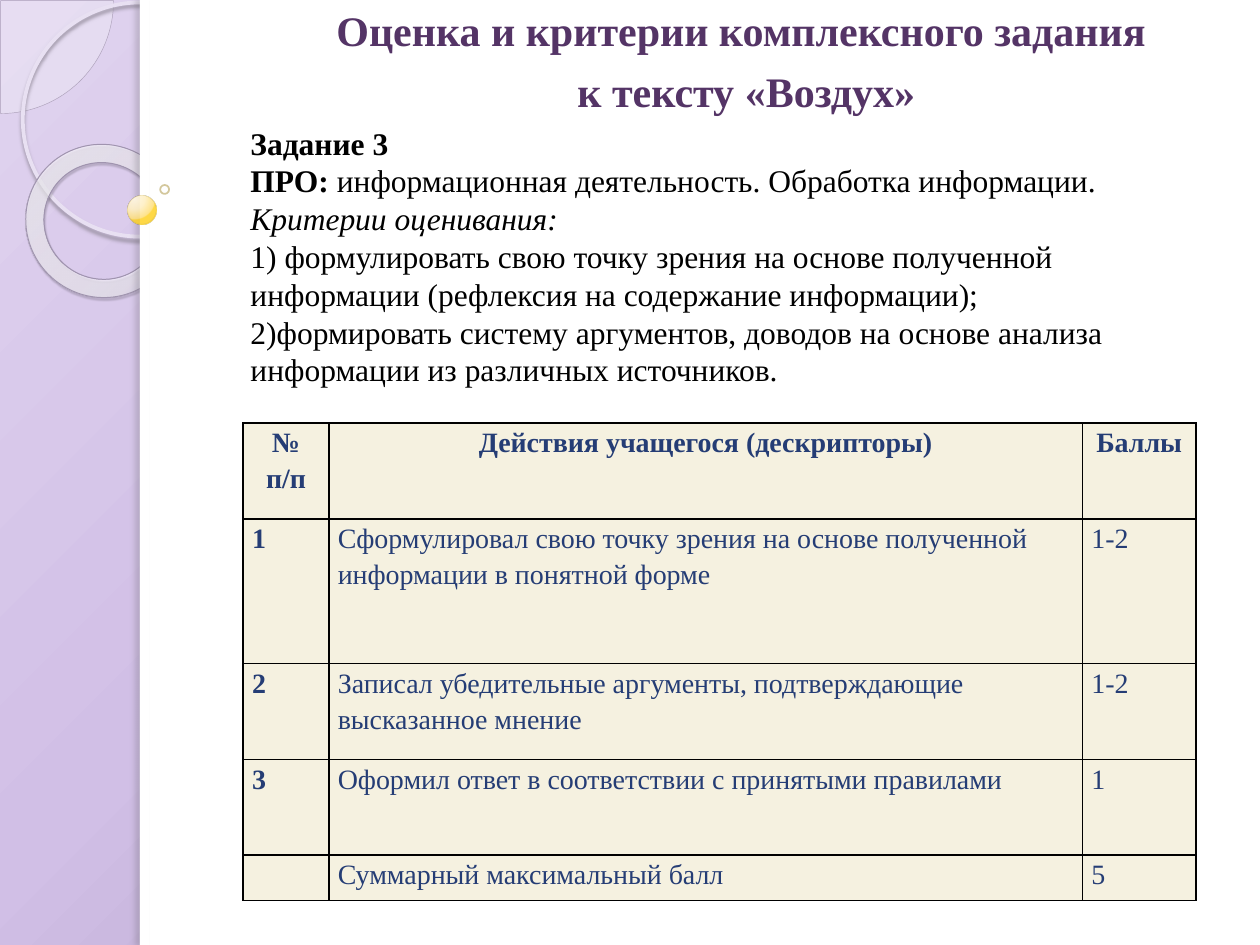
"""Build the slide with the grading criteria for the text «Воздух»."""
from lxml import etree
from pptx import Presentation
from pptx import util as u
from pptx.dml.color import RGBColor
from pptx.enum import shapes, text
from pptx.oxml.ns import qn

FONT = "Times New Roman"
PLUM = RGBColor(0x54, 0x34, 0x66)
NAVY = RGBColor(0x25, 0x3D, 0x75)
BLACK = RGBColor(0, 0, 0)
WHITE = RGBColor(0xFF, 0xFF, 0xFF)
CREAM = RGBColor(0xF5, 0xF1, 0xE0)
MIST = RGBColor(0xF6, 0xF4, 0xF9)
PIE_EDGE = RGBColor(0xAC, 0xA0, 0xB9)
RING = RGBColor(0xE8, 0xE0, 0xF2)
RING_SHADE = RGBColor(0x95, 0x8D, 0x9D)
DONUT_EDGE = RGBColor(0xA0, 0x94, 0xAF)
DONUT_SHADE = RGBColor(0x4A, 0x45, 0x50)
PANEL_SHADE = RGBColor(0x64, 0x60, 0x68)
BALL_EDGE = RGBColor(0xCA, 0xB4, 0x5C)
DOT_EDGE = RGBColor(0xB6, 0xA3, 0x5A)
LILAC = [(0, RGBColor(0xE0, 0xD3, 0xEF), 100), (40, RGBColor(0xD1, 0xBF, 0xE6), 100),
         (100, RGBColor(0x9A, 0x8A, 0xAD), 100)]
PEARL = [(0, RGBColor(0xF9, 0xF7, 0xFB), 70), (70, RGBColor(0xFC, 0xFB, 0xFE), 55),
         (100, RGBColor(0xB0, 0x99, 0xCA), 60)]
GOLD = [(0, RGBColor(0xFF, 0xF7, 0xE2), 95), (50, RGBColor(0xFF, 0xF0, 0xC5), 90),
        (95, RGBColor(0xFF, 0xE0, 0x7C), 88), (100, RGBColor(0xFF, 0xD3, 0x27), 85)]

LEFT, CENTER = text.PP_ALIGN.LEFT, text.PP_ALIGN.CENTER
JUSTIFY = text.PP_ALIGN.JUSTIFY
TITLE = ["Оценка и критерии комплексного задания", " к тексту «Воздух»"]
CRITERIA = [
    [("Задание 3", True, False)],
    [("ПРО: ", True, False),
     ("информационная деятельность. Обработка информации.", False, False)],
    [("Критерии оценивания:", False, True)],
    [("1) формулировать свою точку зрения на основе полученной информации "
      "(рефлексия на содержание информации);", False, False)],
    [("2)формировать систему аргументов, доводов на основе анализа информации "
      "из различных источников.", False, False)],
]
SCORES = [
    ("№ п/п", "Действия учащегося (дескрипторы)", "Баллы"),
    ("1", "Сформулировал свою точку зрения на основе полученной информации "
          "в понятной форме", "1-2"),
    ("2", "Записал убедительные аргументы, подтверждающие высказанное мнение", "1-2"),
    ("3", "Оформил ответ в соответствии с принятыми правилами", "1"),
    ("", "Суммарный максимальный балл", "5"),
]
COLUMN_WIDTHS = [1.73, 15.19, 2.29]
ROW_HEIGHTS = [1.93, 2.92, 1.93, 1.93, 0.91]


def add_node(parent, tag, **attributes):
    """Append a DrawingML element."""
    return etree.SubElement(parent, qn(tag), {k: str(v) for k, v in attributes.items()})


def add_color(parent, color, opacity=100):
    """Append a colour with its opacity in percent."""
    node = add_node(parent, "a:srgbClr", val=color)
    if opacity < 100:
        add_node(node, "a:alpha", val=opacity * 1000)


def set_radial(fill, owner, stops, focus):
    """Give the owner's fill a circular gradient."""
    fill.gradient()
    gradient = owner.find(".//" + qn("a:gradFill"))
    gradient.clear()
    stop_list = add_node(gradient, "a:gsLst")
    for position, color, opacity in stops:
        add_color(add_node(stop_list, "a:gs", pos=position * 1000), color, opacity)
    circle = add_node(gradient, "a:path", path="circle")
    sides = {side: share * 1000 for side, share in zip("ltrb", focus)}
    add_node(circle, "a:fillToRect", **sides)


def add_figure(slide, kind, box, fill=None, opacity=100, stops=None, focus=None,
               edge=None, width=1, edge_opacity=100, shade=None):
    """Add a preset shape with its fill, outline and optional shadow."""
    figure = slide.shapes.add_shape(kind, *map(u.Cm, box))
    if stops:
        set_radial(figure.fill, figure._element, stops, focus)
    elif fill is not None:
        figure.fill.solid()
        figure.fill.fore_color.rgb = fill
        if opacity < 100:
            color = figure._element.spPr.find(qn("a:solidFill"))[0]
            add_node(color, "a:alpha", val=opacity * 1000)
    else:
        figure.fill.background()
    if edge is None:
        figure.line.fill.background()
    else:
        figure.line.color.rgb = edge
        figure.line.width = u.Pt(width)
        if edge_opacity < 100:
            color = figure._element.spPr.find(".//" + qn("a:ln")).find(".//" + qn("a:srgbClr"))
            add_node(color, "a:alpha", val=edge_opacity * 1000)
    figure.shadow.inherit = False
    if shade:
        color, strength, blur, distance, angle = shade
        effects = figure._element.spPr.find(qn("a:effectLst"))
        shadow = add_node(effects, "a:outerShdw", blurRad=u.Pt(blur), dist=u.Pt(distance),
                          dir=angle * 60000, algn="tl", rotWithShape=0)
        add_color(shadow, color, strength)
    return figure


def add_run(paragraph, words, size, color, bold=False, italic=False):
    """Add one formatted run."""
    run = paragraph.add_run()
    run.text = words
    font = run.font
    font.name, font.size, font.bold, font.italic = FONT, u.Pt(size), bold, italic
    font.color.rgb = color


def add_textbox(slide, box):
    """Add a wrapping text box and return its frame."""
    frame = slide.shapes.add_textbox(*map(u.Cm, box)).text_frame
    frame.word_wrap = True
    return frame


def next_paragraph(frame, index):
    """Return the first paragraph or a new one."""
    return frame.add_paragraph() if index else frame.paragraphs[0]


def add_title(slide):
    """Add the two-line heading."""
    frame = add_textbox(slide, (4.5, 0.1, 20.8, 2.41))
    frame.margin_top = 0
    for index, words in enumerate(TITLE):
        paragraph = next_paragraph(frame, index)
        paragraph.alignment = CENTER
        paragraph.space_before = u.Pt(6)
        paragraph._p.get_or_add_pPr().set("marL", str(u.Cm(0.08)))
        add_run(paragraph, words, 24, PLUM, bold=True)


def add_criteria(slide):
    """Add the task description."""
    frame = add_textbox(slide, (4.8, 2.34, 20.22, 5.64))
    frame.vertical_anchor = text.MSO_ANCHOR.MIDDLE
    frame.auto_size = text.MSO_AUTO_SIZE.SHAPE_TO_FIT_TEXT
    for index, runs in enumerate(CRITERIA):
        paragraph = next_paragraph(frame, index)
        for words, bold, italic in runs:
            add_run(paragraph, words, 18, BLACK, bold, italic)


def style_cell(cell):
    """Set a cell's margins, borders and fill."""
    cell.margin_left = cell.margin_right = u.Cm(0.18)
    cell.margin_top = cell.margin_bottom = 0
    for side in ("a:lnL", "a:lnR", "a:lnT", "a:lnB"):
        border = add_node(cell._tc.get_or_add_tcPr(), side, w=u.Pt(1))
        add_color(add_node(border, "a:solidFill"), BLACK)
    cell.fill.solid()
    cell.fill.fore_color.rgb = CREAM


def add_scores(slide):
    """Add the table of descriptors and points."""
    frame = slide.shapes.add_table(len(SCORES), len(COLUMN_WIDTHS), u.Cm(4.9), u.Cm(8.53),
                                   u.Cm(sum(COLUMN_WIDTHS)), u.Cm(sum(ROW_HEIGHTS)))
    scores = frame.table
    for column, width in zip(scores.columns, COLUMN_WIDTHS):
        column.width = u.Cm(width)
    for r, (row, height) in enumerate(zip(scores.rows, ROW_HEIGHTS)):
        row.height = u.Cm(height)
        for c, words in enumerate(SCORES[r]):
            cell = scores.cell(r, c)
            style_cell(cell)
            if words:
                paragraph = cell.text_frame.paragraphs[0]
                paragraph.alignment = CENTER if r == 0 else LEFT if c == 1 else JUSTIFY
                paragraph.line_spacing = 1.15
                add_run(paragraph, words, 16, NAVY, bold=r == 0 or c == 0)


def add_decor(slide):
    """Add the lilac side strip with its rings and the white panel."""
    preset = shapes.MSO_SHAPE
    set_radial(slide.background.fill, slide._element, LILAC, (-24, -20, 124, 120))
    quarter = add_figure(slide, preset.PIE, (-2.26, -2.26, 4.55, 4.55), MIST, 33,
                         edge=PIE_EDGE, width=0.25)
    quarter.adjustments[0], quarter.adjustments[1] = 0, 54
    add_figure(slide, preset.OVAL, (0.46, 0.05, 4.72, 4.72), edge=RING, width=2.15,
               shade=(RING_SHADE, 85, 2, 2, 90))
    donut = add_figure(slide, preset.DONUT, (0.51, 2.92, 3.12, 3.07), stops=PEARL,
                       focus=(-408, -50, 508, 150), edge=DONUT_EDGE, width=0.58,
                       shade=(DONUT_SHADE, 35, 1, 1.2, 75))
    donut.rotation = 38.6
    donut.adjustments[0] = 0.12
    add_figure(slide, preset.RECTANGLE, (2.82, 0, 22.58, 19.05), WHITE)
    add_figure(slide, preset.RECTANGLE, (2.82, 0, 0.2, 19.05), WHITE,
               shade=(PANEL_SHADE, 25, 3, 3, 180))
    add_figure(slide, preset.OVAL, (2.57, 3.94, 0.58, 0.58), stops=GOLD,
               focus=(25, 12, 75, 88), edge=BALL_EDGE, width=0.16, edge_opacity=60)
    add_figure(slide, preset.OVAL, (3.23, 3.73, 0.18, 0.18), edge=DOT_EDGE, edge_opacity=60)


def main():
    """Build and save the slide."""
    deck = Presentation()
    deck.slide_width, deck.slide_height = u.Cm(25.4), u.Cm(19.05)
    slide = deck.slides.add_slide(deck.slide_layouts[6])
    add_decor(slide)
    add_title(slide)
    add_scores(slide)
    add_criteria(slide)
    deck.save("out.pptx")


if __name__ == "__main__":
    main()
